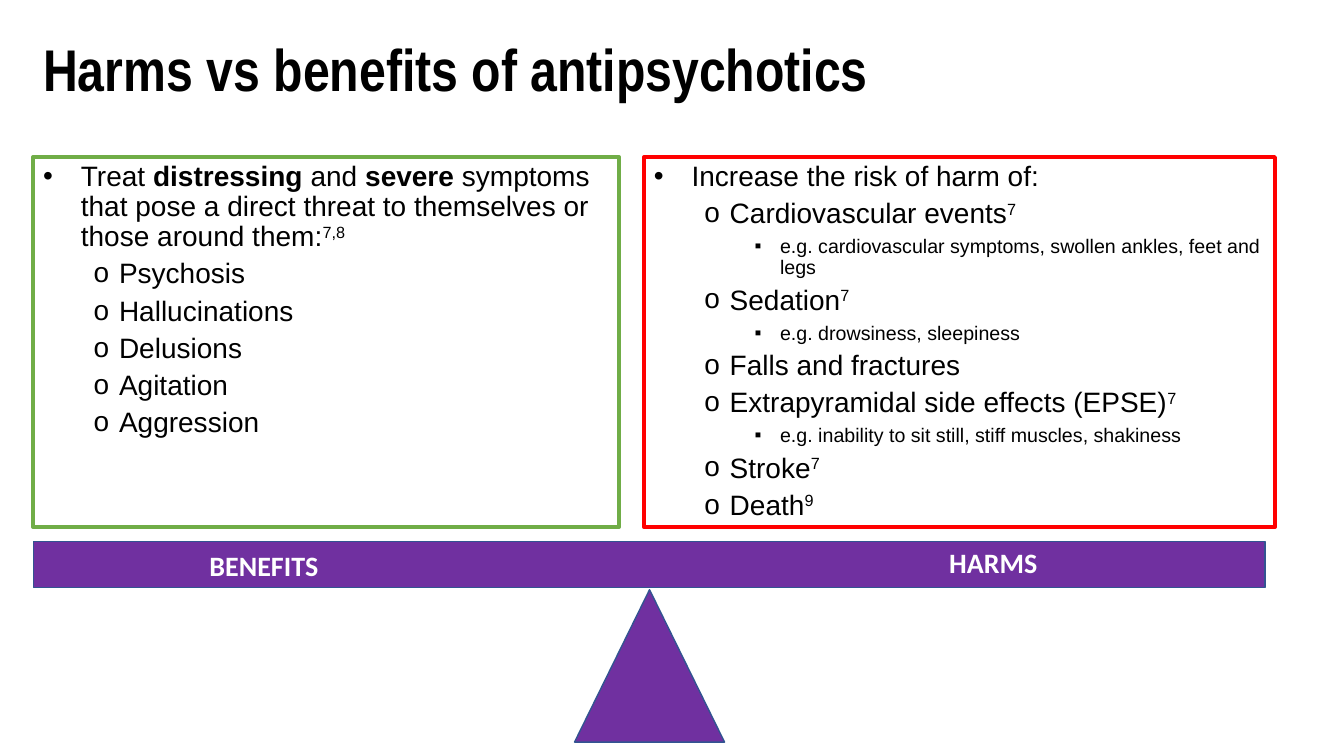
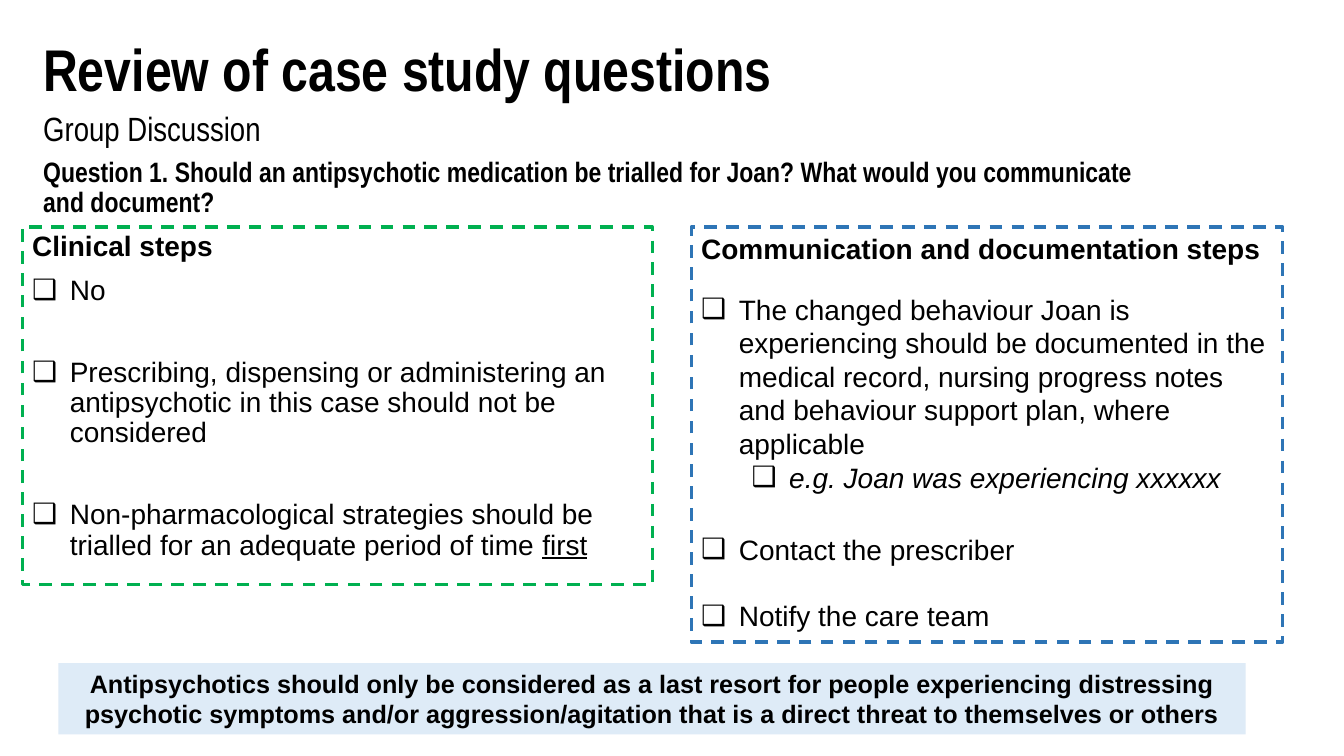
from lxml import etree
from pptx import Presentation
from pptx.dml.color import RGBColor
from pptx.enum.dml import MSO_LINE_DASH_STYLE as DASH
from pptx.enum.shapes import MSO_SHAPE as SHAPE
from pptx.enum.text import MSO_ANCHOR as ANCHOR, PP_ALIGN as ALIGN
from pptx.oxml.ns import qn
from pptx.util import Cm, Pt

BLACK, WHITE, PURPLE, NAVY = "000000", "FFFFFF", "7030A0", "325491"
LEFT = 0.84
BOLD, ITALIC, UNDERLINE, SUPER = {"bold": True}, {"italic": True}, {"underline": True}, {"super": True}
PLAIN = {"indent": (0, 0)}
DOT = {"bullet": "•", "indent": (0.95, 0.95), "before": 10}
RING = {"bullet": "o", "indent": (1.91, 0.64), "before": 5, "level": 1}
SQUARE = {"bullet": "▪", "indent": (3.18, 0.64), "before": 5, "level": 2, "size": 14}
CHECK = {"bullet": "❑", "indent": (0.95, 0.95)}
SUBCHECK = {"bullet": "❑", "indent": (2.22, 0.95), "level": 1}


def rgb(value):
    return RGBColor.from_string(value)


class Deck:
    """Holds the shared style and the current slide, and draws its elements."""

    def __init__(self):
        self.prs = Presentation()
        self.prs.slide_width, self.prs.slide_height = Cm(33.87), Cm(19.05)
        self.s = None

    def slide(self, title, width):
        self.s = self.prs.slides.add_slide(self.prs.slide_layouts[6])
        self.heading(title, 0.91, width, 2.06, 42)

    def heading(self, text, top, width, height, size, bold=True):
        self.text((LEFT, top, width, height), text, size=size, font="Arial Narrow", bold=bold, spacing=0.9)

    def text(self, at, text, **style):
        sp = self.s.shapes.add_textbox(*map(Cm, at))
        self.fill_text(sp, [(PLAIN, [(text, {})])], **style)

    def shape(self, at, kind=SHAPE.RECTANGLE, fill=None, line=None, weight=1, dash=None):
        sp = self.s.shapes.add_shape(kind, *map(Cm, at))
        sp.shadow.inherit = False
        if fill:
            sp.fill.solid()
            sp.fill.fore_color.rgb = rgb(fill)
        else:
            sp.fill.background()
        if line:
            sp.line.color.rgb = rgb(line)
            sp.line.width = Pt(weight)
            if dash:
                sp.line.dash_style = dash
        else:
            sp.line.fill.background()
        return sp

    def panel(self, at, line, paras, weight=3, dash=None, spacing=0.9):
        self.fill_text(self.shape(at, line=line, weight=weight, dash=dash), paras, spacing=spacing)

    def fill_text(self, sp, paras, size=20, font="Arial", color=BLACK, bold=False, align=ALIGN.LEFT, spacing=1.0):
        tf = sp.text_frame
        tf.word_wrap = True
        tf.vertical_anchor = ANCHOR.TOP
        for i, (kind, runs) in enumerate(paras):
            p = tf.paragraphs[0] if i == 0 else tf.add_paragraph()
            p.alignment, p.line_spacing, p.level = align, spacing, kind.get("level", 0)
            p.space_before = Pt(kind.get("before", 0) if i else 0)
            self.bullet(p, kind)
            for text, extra in runs:
                r = p.add_run()
                r.text = text
                values = {"name": font, "size": Pt(kind.get("size", size)), "bold": bold, **extra}
                if values.pop("super", False):
                    r._r.get_or_add_rPr().set("baseline", "30000")
                for name, value in values.items():
                    setattr(r.font, name, value)
                r.font.color.rgb = rgb(color)

    def bullet(self, p, kind):
        pPr = p._p.get_or_add_pPr()
        margin, hang = kind["indent"]
        pPr.set("marL", str(Cm(margin)))
        pPr.set("indent", str(-Cm(hang)))
        if "bullet" in kind:
            etree.SubElement(pPr, qn("a:buFont")).set("typeface", "Arial")
            etree.SubElement(pPr, qn("a:buChar")).set("char", kind["bullet"])


def item(kind, text, ref=None, before=None):
    if before is not None:
        kind = {**kind, "before": before}
    return kind, [(text, {})] + ([(ref, SUPER)] if ref else [])


def harms_and_benefits(deck):
    deck.slide("Harms vs benefits of antipsychotics", 23.88)
    top, height = 3.96, 9.32
    deck.panel((16.23, top, 15.9, height), "FF0000", [
        item(DOT, "Increase the risk of harm of:"),
        item(RING, "Cardiovascular events", "7"),
        item(SQUARE, "e.g. cardiovascular symptoms, swollen ankles, feet and legs"),
        item(RING, "Sedation", "7"),
        item(SQUARE, "e.g. drowsiness, sleepiness"),
        item(RING, "Falls and fractures"),
        item(RING, "Extrapyramidal side effects (EPSE)", "7"),
        item(SQUARE, "e.g. inability to sit still, stiff muscles, shakiness"),
        item(RING, "Stroke", "7"),
        item(RING, "Death", "9"),
    ])
    symptoms = ["Psychosis", "Hallucinations", "Delusions", "Agitation", "Aggression"]
    deck.panel((LEFT, top, 14.76, height), "70AD47", [
        (DOT, [("Treat", {}), (" distressing ", BOLD), ("and ", {}), ("severe", BOLD),
               (" symptoms that pose a direct threat to themselves or those around them:", {}),
               ("7,8", SUPER)]),
        *[item(RING, symptom) for symptom in symptoms],
    ])
    deck.shape((14.48, 14.86, 3.78, 3.84), SHAPE.FLOWCHART_EXTRACT, PURPLE, NAVY)
    deck.shape((LEFT, 13.64, 31.04, 1.17), fill=PURPLE, line=NAVY)
    for label, left, label_top in [("BENEFITS", 5.03, 13.69), ("HARMS", 23.67, 13.61)]:
        deck.text((left, label_top, 4.27, 1.02), label, font="Calibri", color=WHITE, bold=True)


def case_study(deck):
    deck.slide("Review of case study questions", 29.92)
    deck.heading("Group Discussion", 2.72, 20.7, 1.3, 24, bold=False)
    deck.heading("Question 1. Should an antipsychotic medication be trialled for Joan? "
                 "What would you communicate and document?", 3.86, 29.01, 1.14, 20)
    top, frame = 5.72, {"weight": 2.25, "dash": DASH.DASH}
    deck.panel((0.56, top, 15.88, 9.02), "00B050", [
        (PLAIN, [("Clinical steps", BOLD)]),
        item(CHECK, "No", before=10),
        item(CHECK, "Prescribing, dispensing or administering an antipsychotic in this case "
                    "should not be considered", before=37),
        ({**CHECK, "before": 37}, [
            ("Non-pharmacological strategies should be trialled for an adequate period of time ", {}),
            ("first", UNDERLINE)]),
    ], **frame)
    deck.panel((17.42, top, 14.91, 10.46), "2E75B6", [
        (PLAIN, [("Communication and documentation steps", BOLD)]),
        item(CHECK, "The changed behaviour Joan is experiencing should be documented in the medical "
                    "record, nursing progress notes and behaviour support plan, where applicable", before=19),
        (SUBCHECK, [("e.g. Joan was experiencing xxxxxx", ITALIC)]),
        item(CHECK, "Contact the prescriber", before=27.5),
        item(CHECK, "Notify the care team", before=23.5),
    ], spacing=1.0, **frame)
    banner = deck.shape((1.47, 16.71, 29.92, 1.8), fill="DEEBF7")
    deck.fill_text(banner, [item(PLAIN, "Antipsychotics should only be considered as a last resort for people "
                                        "experiencing distressing psychotic symptoms and/or aggression/agitation "
                                        "that is a direct threat to themselves or others")],
                   size=18, bold=True, align=ALIGN.CENTER)


def main():
    deck = Deck()
    harms_and_benefits(deck)
    case_study(deck)
    deck.prs.save("out.pptx")


if __name__ == "__main__":
    main()
